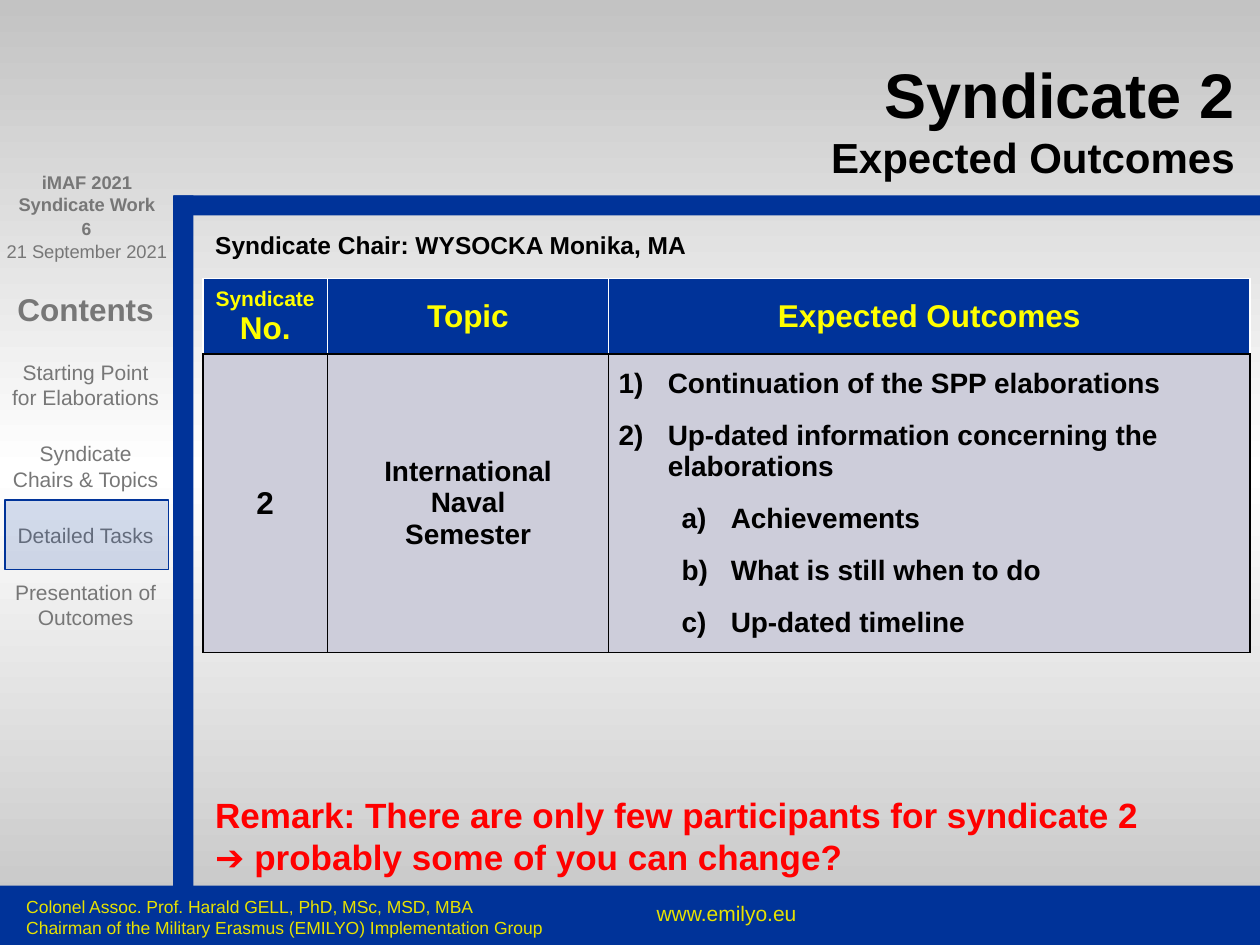
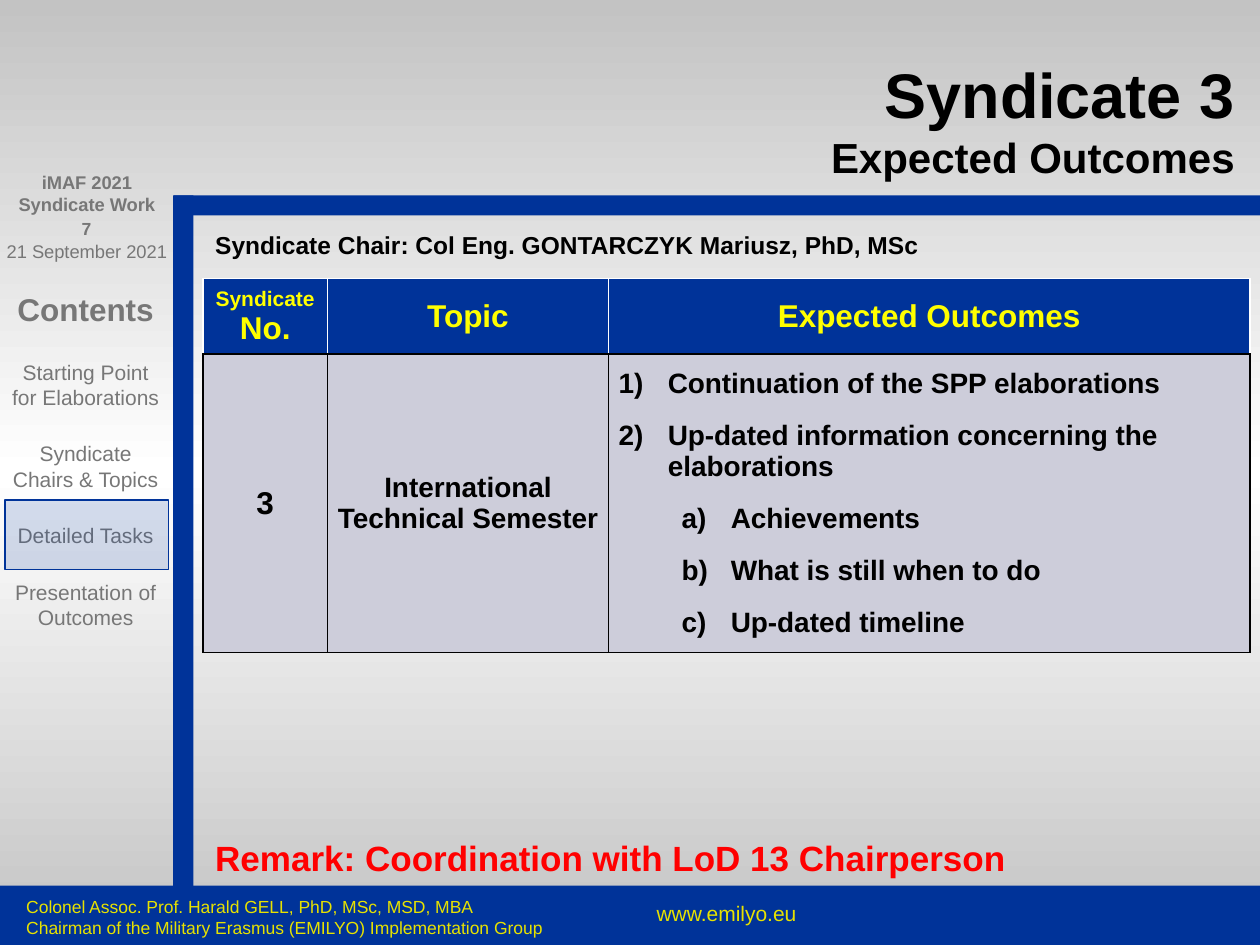
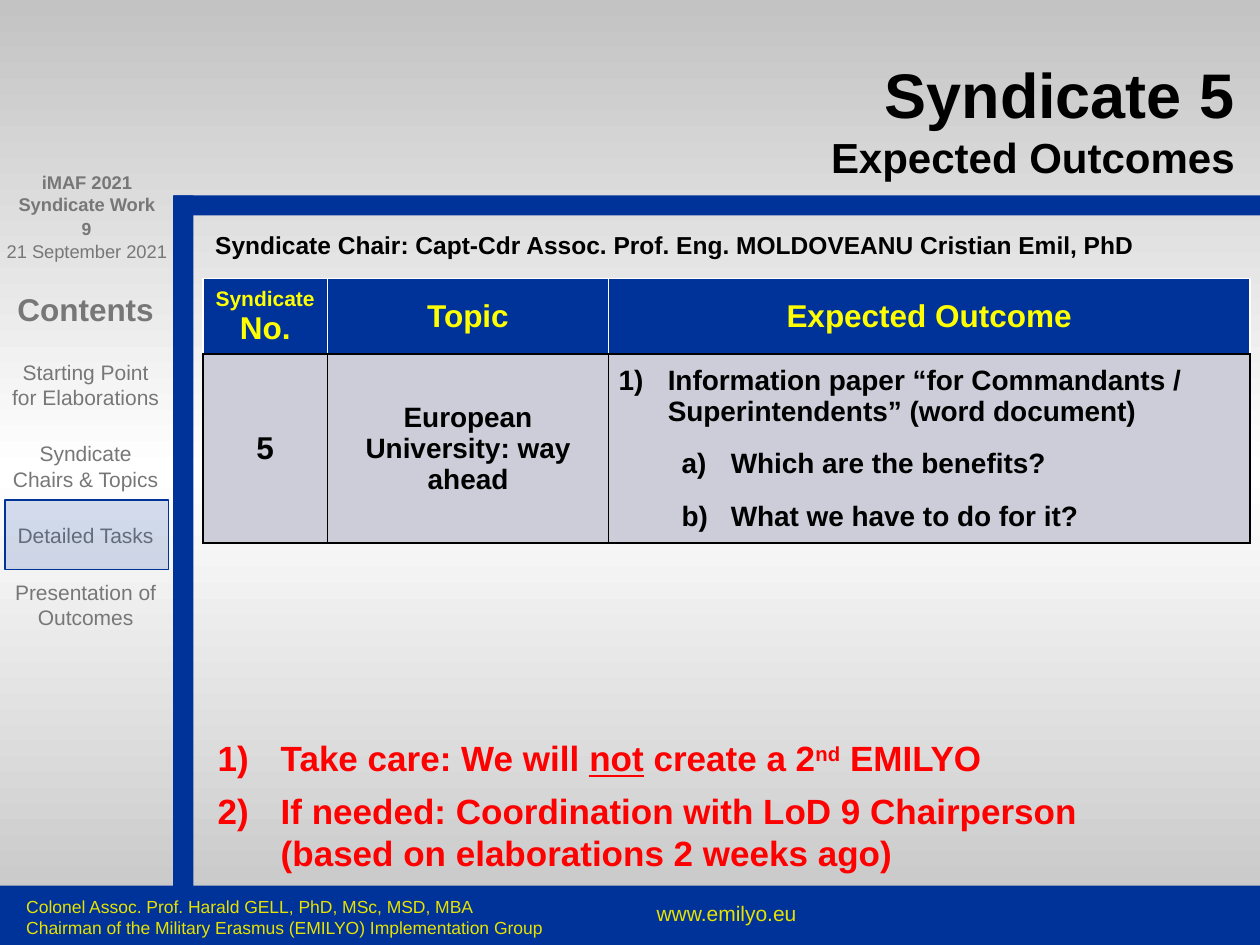
from copy import deepcopy

from lxml import etree
from pptx import Presentation
from pptx import util as u
from pptx.dml.color import RGBColor
from pptx.enum import shapes, text
from pptx.oxml import ns

SLIDE_WIDTH, SLIDE_HEIGHT = u.Inches(10), u.Inches(7.5)
COLORS = {
    "blue": "003399", "edge": "C3C3C3", "white": "FFFFFF", "black": "000000",
    "gray": "777777", "footer": "E7E200", "yellow": "FFFF00",
    "cell": "CDCDDA", "red": "FF0000",
}
ALIGN = text.PP_ALIGN
NUMBERING = {  # level: (scheme, left margin, hanging indent) in inches
    0: ("arabicParenR", 0.39, 0.39),
    1: ("alphaLcParenR", 0.89, 0.39),
}
COLUMN_WIDTHS = (9.9, 22.3, 50.9)
HEADER_HEIGHT = 7.53
CONTENTS = ("Starting Point for Elaborations", "Syndicate Chairs & Topics ",
            "Detailed Tasks", "Presentation of Outcomes")
SPP_OUTCOMES = (
    (0, "Continuation of the SPP elaborations"),
    (0, "Up-dated information concerning the elaborations"),
    (1, "Achievements"),
    (1, "What is still when to do"),
    (1, "Up-dated timeline"),
)

SYNDICATES = (
    {
        "number": 2, "page": 6,
        "chair": "WYSOCKA Monika, MA",
        "heading": "Expected Outcomes",
        "topic": ("International", "Naval", "Semester"),
        "outcomes": SPP_OUTCOMES, "row_height": 30,
        "remark_box": (16.1, 83.33, 82.7, 10.27),
        "remarks": [{"runs": [("Remark: There are only few participants for syndicate 2\n"
                               "➔ probably some of you can change?", {})]}],
    },
    {
        "number": 3, "page": 7,
        "chair": "Col Eng. GONTARCZYK Mariusz, PhD, MSc",
        "heading": "Expected Outcomes",
        "topic": ("International Technical Semester",),
        "outcomes": SPP_OUTCOMES, "row_height": 30,
        "remark_box": (16.1, 87.87, 82.7, 5.87),
        "remarks": [{"runs": [("Remark: Coordination with LoD 13 Chairperson", {})]}],
    },
    {
        "number": 5, "page": 9,
        "chair": "Capt-Cdr Assoc. Prof. Eng. MOLDOVEANU Cristian Emil, PhD",
        "heading": "Expected Outcome",
        "topic": ("European University: way ahead",),
        "outcomes": (
            (0, "Information paper “for Commandants / Superintendents” (word document)"),
            (1, "Which are the benefits?"),
            (1, "What we have to do for it?"),
        ),
        "row_height": 18.93,
        "remark_box": (16.3, 77.33, 82.7, 15.87),
        "remarks": [
            {"runs": [("Take care: We will ", {}), ("not", {"underline": True}),
                      (" create a 2", {}), ("nd", {"baseline": 30000}),
                      (" EMILYO", {})],
             "numbering": ("arabicParenR", 0.5, 0.5), "space_after": u.Pt(6)},
            {"runs": [("If needed: Coordination with LoD 9 Chairperson\n"
                       "(based on elaborations 2 weeks ago)", {})],
             "numbering": ("arabicParenR", 0.5, 0.5)},
        ],
    },
)


# Geometry and colour
def place(left, top, width, height):
    """Turn percentages of the slide's size into lengths."""
    return (int(SLIDE_WIDTH * left / 100), int(SLIDE_HEIGHT * top / 100),
            int(SLIDE_WIDTH * width / 100), int(SLIDE_HEIGHT * height / 100))


def rgb(name):
    return RGBColor.from_string(COLORS[name])


def child(parent, tag, **attributes):
    return etree.SubElement(parent, ns.qn(tag), attributes)


# Text
def font_format(size, color, bold=False):
    return {"size": u.Pt(size), "color": color, "bold": bold}


def line(words, style=None, **paragraph_format):
    return {"runs": [(words, style or {})], **paragraph_format}


def add_run(paragraph, words, style):
    run = paragraph.add_run()
    run.text = words
    run.font.name = "Arial"
    for key, value in style.items():
        if key == "color":
            run.font.color.rgb = rgb(value)
        elif key == "baseline":
            run._r.get_or_add_rPr().set("baseline", str(value))
        else:
            setattr(run.font, key, value)
    return run


def add_numbering(paragraph, scheme, margin, hanging):
    properties = paragraph._p.get_or_add_pPr()
    properties.set("marL", str(u.Inches(margin)))
    properties.set("indent", str(-u.Inches(hanging)))
    child(properties, "a:buFont", typeface="+mj-lt")
    child(properties, "a:buAutoNum", type=scheme)


def write(frame, paragraphs, style, align=ALIGN.LEFT):
    for index, content in enumerate(paragraphs):
        paragraph = frame.add_paragraph() if index else frame.paragraphs[0]
        paragraph.alignment = align
        for key, value in content.items():
            if key == "numbering":
                add_numbering(paragraph, *value)
            elif key != "runs":
                setattr(paragraph, key, value)
        for words, changes in content["runs"]:
            run = None
            for part in words.split("\n"):
                if run is not None:
                    paragraph.add_line_break()
                    paragraph._p[-1].append(deepcopy(run._r.rPr))
                run = add_run(paragraph, part, {**style, **changes})


def set_insets(frame, inset):
    for side in ("left", "top", "right", "bottom"):
        setattr(frame, "margin_" + side, u.Inches(inset))


def add_text(slide, box, paragraphs, style, align=ALIGN.LEFT, inset=None):
    frame = slide.shapes.add_textbox(*place(*box)).text_frame
    frame.word_wrap = True
    if inset is not None:
        set_insets(frame, inset)
    write(frame, paragraphs, style, align)


# Shared frame of every slide
def set_background(master):
    fill = master.background.fill
    fill.gradient()
    fill.gradient_angle = 90
    stop_list = master._element.xpath("./p:cSld/p:bg//a:gsLst")[0]
    stop_list.insert(1, deepcopy(stop_list[0]))
    for stop, color, position in zip(fill.gradient_stops,
                                     ("edge", "white", "edge"), (0, 0.5, 1)):
        stop.color.rgb = rgb(color)
        stop.position = position


def add_bar(slide, box):
    bar = slide.shapes.add_shape(shapes.MSO_SHAPE.RECTANGLE, *place(*box))
    bar.shadow.inherit = False
    bar.fill.solid()
    bar.fill.fore_color.rgb = rgb("blue")
    bar.line.fill.background()
    return bar


def add_highlight(slide):
    highlight = add_bar(slide, (0.4, 52.93, 13, 7.33))
    color = highlight._element.spPr.find(".//" + ns.qn("a:srgbClr"))
    child(color, "a:alpha", val="16000")
    highlight.line.color.rgb = rgb("blue")
    highlight.line.width = u.Pt(0.75)


def add_frame(slide, page):
    for box in ((13.8, 20.67, 86.2, 2.13), (0, 93.73, 100, 6.27),
                (13.75, 20.67, 1.6, 73.2)):
        add_bar(slide, box)

    # Footer
    add_text(slide, (49, 94.67, 17.8, 4.67), [line("www.emilyo.eu ")],
             font_format(12, "footer"), ALIGN.CENTER)
    add_text(slide, (1.1, 94.13, 43.8, 4.67),
             [line("Colonel Assoc. Prof. Harald GELL, PhD, MSc, MSD, MBA"),
              line("Chairman of the Military Erasmus (EMILYO) Implementation Group")],
             font_format(10, "footer"))

    # Side column
    add_text(slide, (4.4, 22.4, 4.9, 3.6), [line(str(page))],
             font_format(10, "gray", True), ALIGN.CENTER)
    gap = {"space_after": u.Pt(18)}
    heading = line("Contents", font_format(18, "gray", True), **gap)
    add_text(slide, (0.5, 30.13, 12.6, 63.73),
             [heading] + [line(entry, **gap) for entry in CONTENTS],
             font_format(12, "gray"), ALIGN.CENTER, inset=0.04)
    add_text(slide, (0, 18.13, 13.8, 10.93),
             [line("iMAF 2021"), line("Syndicate Work"),
              line("21 September 2021", {"bold": False}, space_before=u.Pt(14))],
             font_format(10.5, "gray", True), ALIGN.CENTER, inset=0)


def set_title(slide, number):
    title = slide.shapes.title
    title.left, title.top, title.width, title.height = place(13.8, 2.53, 84.2, 16.67)
    frame = title.text_frame
    frame.auto_size = text.MSO_AUTO_SIZE.NONE
    frame.vertical_anchor = text.MSO_ANCHOR.BOTTOM
    set_insets(frame, 0)
    write(frame, [{"runs": [(f"Syndicate {number}\n", {}),
                            ("Expected Outcomes", {"size": u.Pt(24)})]}],
          font_format(36, "black", True), ALIGN.RIGHT)


# Table
def set_borders(cell, colors):
    properties = cell._tc.get_or_add_tcPr()
    for index, (side, color) in enumerate(zip("LRTB", colors)):
        border = child(properties, "a:ln" + side, w=str(u.Pt(1)))
        child(child(border, "a:solidFill"), "a:srgbClr", val=COLORS[color])
        properties.insert(index, border)


def fill_cell(cell, paragraphs, style, fill, borders, align=ALIGN.CENTER):
    cell.vertical_anchor = text.MSO_ANCHOR.MIDDLE
    for side, inset in zip(("left", "top", "right", "bottom"), (0.08, 0.05) * 2):
        setattr(cell, "margin_" + side, u.Inches(inset))
    cell.fill.solid()
    cell.fill.fore_color.rgb = rgb(fill)
    set_borders(cell, borders)
    write(cell.text_frame, paragraphs, style, align)


def outcome_lines(outcomes):
    paragraphs = []
    for index, (level, words) in enumerate(outcomes):
        spacing = {"space_before": u.Pt(6)} if index else {}
        paragraphs.append(line(words, level=level, numbering=NUMBERING[level],
                               space_after=u.Pt(6), **spacing))
    return paragraphs


def add_outcome_table(slide, syndicate):
    row_heights = (HEADER_HEIGHT, syndicate["row_height"])
    box = place(16.1, 29.47, sum(COLUMN_WIDTHS), sum(row_heights))
    table = slide.shapes.add_table(2, 3, *box).table
    for column, share in zip(table.columns, COLUMN_WIDTHS):
        column.width = int(SLIDE_WIDTH * share / 100)
    for row, share in zip(table.rows, row_heights):
        row.height = int(SLIDE_HEIGHT * share / 100)

    headers = ([line("Syndicate", {"size": u.Pt(12)}), line("No.")],
               [line("Topic")], [line(syndicate["heading"])])
    for column, paragraphs in enumerate(headers):
        fill_cell(table.cell(0, column), paragraphs, font_format(18, "yellow", True),
                  "blue", ("white", "white", "white", "black"))

    body = (([line(str(syndicate["number"]))], 18, ALIGN.CENTER),
            ([line(words) for words in syndicate["topic"]], 16, ALIGN.CENTER),
            (outcome_lines(syndicate["outcomes"]), 16, ALIGN.LEFT))
    for column, (paragraphs, size, align) in enumerate(body):
        fill_cell(table.cell(1, column), paragraphs, font_format(size, "black", True),
                  "cell", ("black",) * 4, align)


def add_syndicate_slide(presentation, syndicate):
    slide = presentation.slides.add_slide(presentation.slide_layouts[5])
    add_frame(slide, syndicate["page"])
    set_title(slide, syndicate["number"])
    add_outcome_table(slide, syndicate)
    add_text(slide, (16.1, 23.73, 82.7, 4.53),
             [line("Syndicate Chair: " + syndicate["chair"])],
             font_format(14, "black", True))
    add_text(slide, syndicate["remark_box"], syndicate["remarks"],
             font_format(20, "red", True))
    add_highlight(slide)


def main():
    presentation = Presentation()
    presentation.slide_width, presentation.slide_height = SLIDE_WIDTH, SLIDE_HEIGHT
    set_background(presentation.slide_master)
    for syndicate in SYNDICATES:
        add_syndicate_slide(presentation, syndicate)
    presentation.save("out.pptx")


if __name__ == "__main__":
    main()
